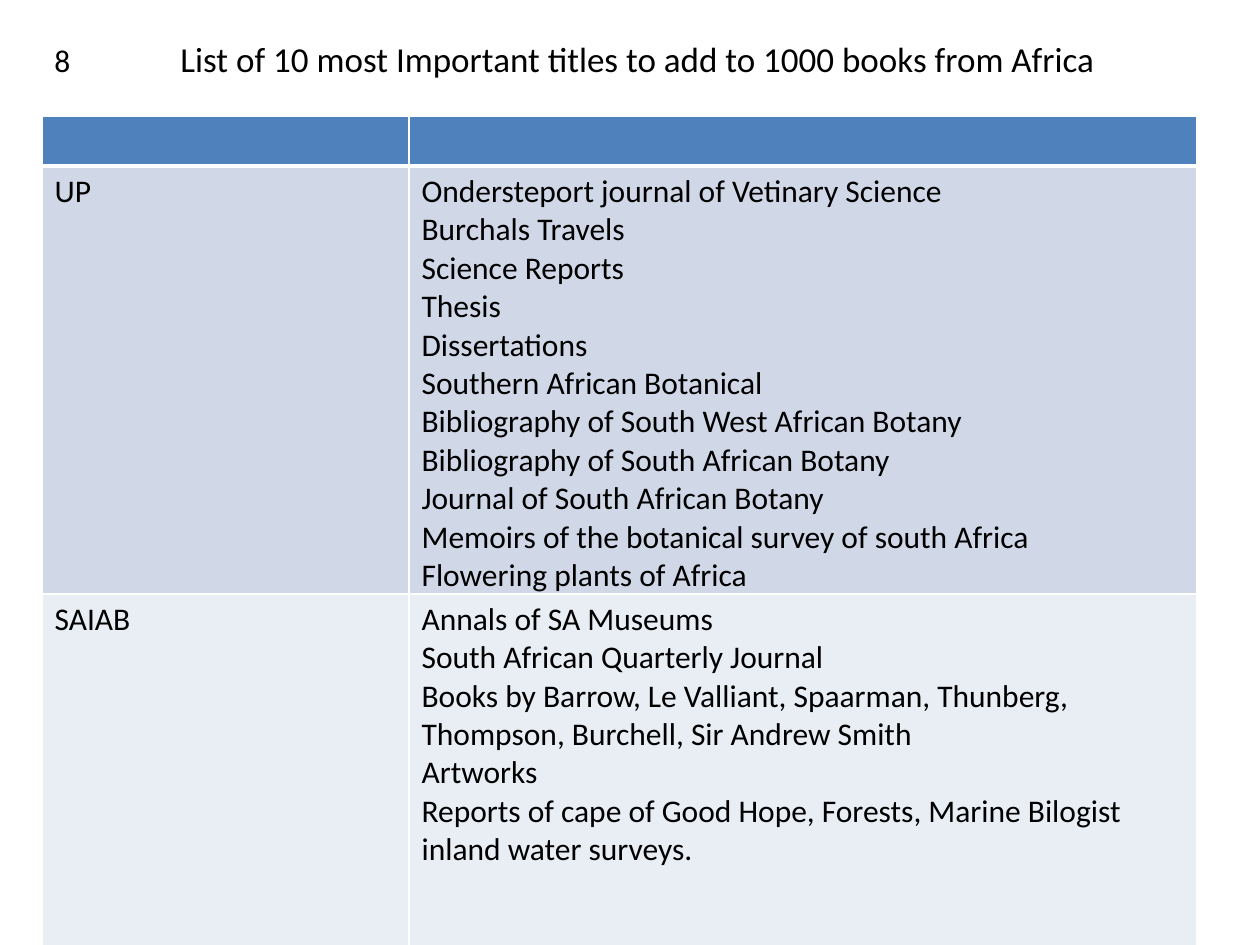
from lxml.etree import SubElement
from pptx import Presentation
from pptx.dml.color import RGBColor
from pptx.oxml.ns import qn
from pptx.util import Emu, Pt

FONT = "Calibri"
COLORS = {"text": "000000", "line": "FFFFFF", "header": "4F81BD",
          "odd": "D0D8E8", "even": "E9EDF4"}
TITLES = [
    ("UP", [
        "Ondersteport journal of Vetinary Science",
        "Burchals Travels",
        "Science Reports",
        "Thesis",
        "Dissertations",
        "Southern African Botanical",
        "Bibliography of South West African Botany",
        "Bibliography of South African Botany",
        "Journal of South African Botany",
        "Memoirs of the botanical survey of south Africa",
        "Flowering plants of Africa",
    ]),
    ("SAIAB", [
        "Annals of SA Museums",
        "South African Quarterly Journal",
        "Books by Barrow, Le Valliant, Spaarman, Thunberg, "
        "Thompson, Burchell, Sir Andrew Smith",
        "Artworks",
        "Reports of cape of Good Hope, Forests, Marine Bilogist "
        "inland water surveys.",
    ]),
    ("", [""]),
]


def px(n):
    """Turn px at 126 to the inch into EMU."""
    return Emu(round(n * 914400 / 126))


def rgb(name):
    """Look up a named colour."""
    return RGBColor.from_string(COLORS[name])


def style_font(font, size):
    """Set the slide's font at the given size."""
    font.name, font.size = FONT, Pt(size)
    font.color.rgb = rgb("text")


def add_heading(s, x, y, w, h, number, title):
    """Place the slide number and the title on one tabbed line."""
    tf = s.shapes.add_textbox(px(x), px(y), px(w), px(h)).text_frame
    tf.word_wrap = True
    p = tf.paragraphs[0]
    tabs = SubElement(p._p.get_or_add_pPr(), qn("a:tabLst"))
    SubElement(tabs, qn("a:tab"), pos=str(px(126)), algn="l")
    for text, size in ((number + "\t", 18), (title, 20)):
        r = p.add_run()
        r.text = text
        style_font(r.font, size)


def style_cell(cell, fill, bottom=1, top=1):
    """Give a cell white borders and a solid fill."""
    tcPr = cell._tc.get_or_add_tcPr()
    for side, width in (("L", 1), ("R", 1), ("T", top), ("B", bottom)):
        ln = SubElement(tcPr, qn(f"a:ln{side}"), w=str(Pt(width)))
        SubElement(SubElement(ln, qn("a:solidFill")), qn("a:srgbClr"),
                   val=COLORS["line"])
    cell.fill.solid()
    cell.fill.fore_color.rgb = rgb(fill)
    cell.margin_bottom = 0


def fill_cell(cell, lines):
    """Write one paragraph for each line."""
    tf = cell.text_frame
    tf.text = "\n".join(lines)
    for p in tf.paragraphs:
        style_font(p.font, 18)


def add_titles_table(s, x, y, w, h, rows):
    """Place the table of institutions and their titles."""
    heights = [50, 428, h - 529, 51]
    widths = [367, w - 367]
    table = s.shapes.add_table(len(rows) + 1, 2, px(x), px(y), px(w), px(h)).table
    for col, width in zip(table.columns, widths):
        col.width = px(width)
    for row, height in zip(table.rows, heights):
        row.height = px(height)
    for cell in table.rows[0].cells:
        style_cell(cell, "header", bottom=3)
    for i, (name, titles) in enumerate(rows, 1):
        for cell, lines in zip(table.rows[i].cells, ([name], titles)):
            style_cell(cell, "odd" if i % 2 else "even", top=3 if i == 1 else 1)
            fill_cell(cell, lines)


def main():
    """Build and save the slide."""
    prs = Presentation()
    prs.slide_width, prs.slide_height = px(1260), px(945)
    s = prs.slides.add_slide(prs.slide_layouts[6])
    add_heading(s, 42, 31, 1176, 55, "8",
                "List of 10 most Important titles to add to 1000 books from Africa")
    add_titles_table(s, 42, 116, 1155, 881, TITLES)
    prs.save("out.pptx")


if __name__ == "__main__":
    main()
